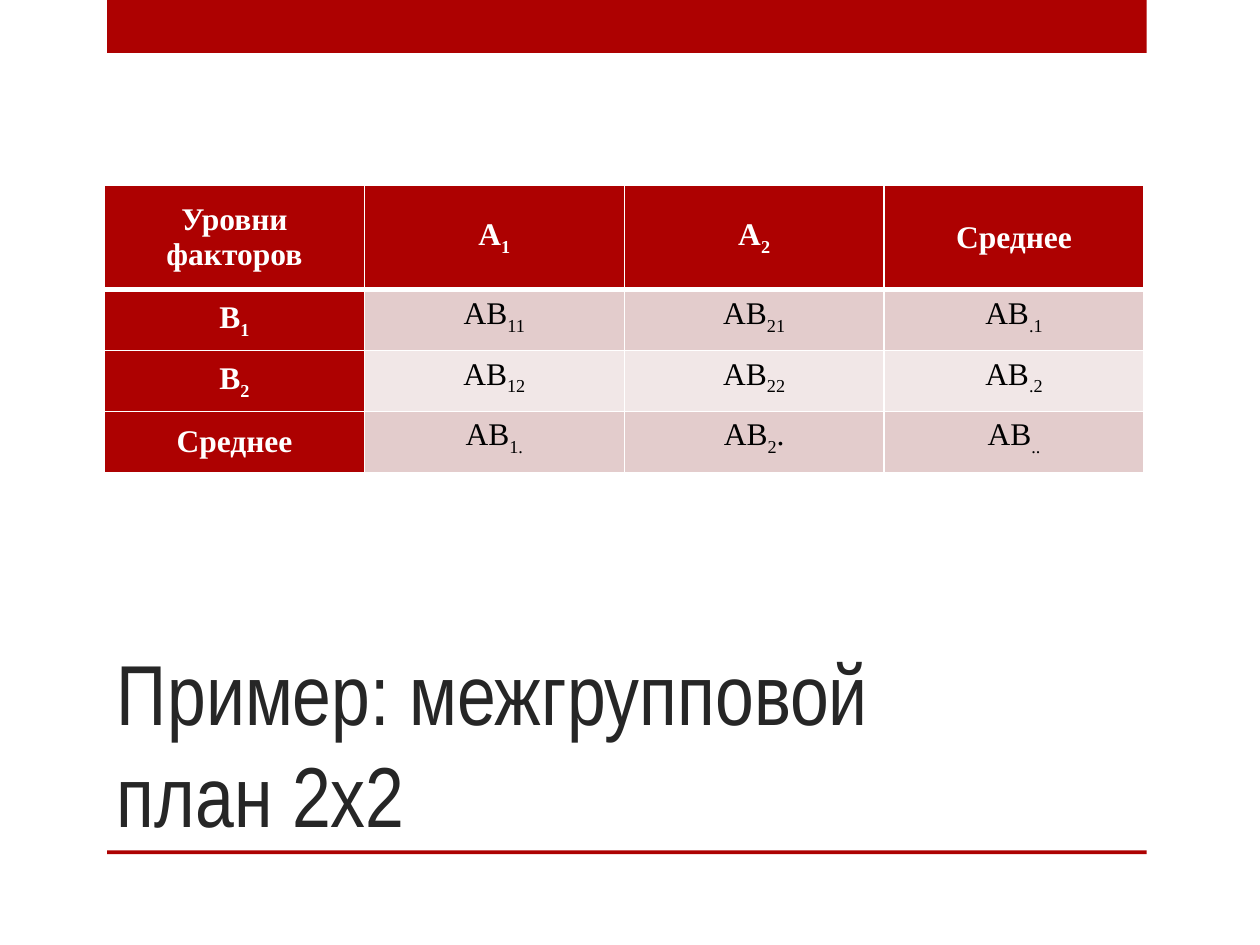
from lxml.etree import SubElement
from pptx import Presentation
from pptx.dml.color import RGBColor
from pptx.enum.shapes import MSO_SHAPE
from pptx.enum.text import MSO_ANCHOR, PP_ALIGN
from pptx.oxml.ns import qn
from pptx.util import Inches, Pt

RED = RGBColor(0xAD, 0x01, 0x01)
WHITE = RGBColor(0xFF, 0xFF, 0xFF)
BLACK = RGBColor(0, 0, 0)
DARK = RGBColor(0x26, 0x26, 0x26)
ROSE = RGBColor(0xE3, 0xCC, 0xCC)
PALE = RGBColor(0xF1, 0xE7, 0xE7)

ROWS = [
    [["Уровни факторов"], ["А", "1"], ["А", "2"], ["Среднее"]],
    [["B", "1"], ["AB", "11"], ["AB", "21"], ["AB", ".1"]],
    [["B", "2"], ["AB", "12"], ["AB", "22"], ["AB", ".2"]],
    [["Среднее"], ["AB", "1."], ["AB", "2", "."], ["AB", ".."]],
]


def add_bar(slide, left, top, width, height):
    bar = slide.shapes.add_shape(
        MSO_SHAPE.RECTANGLE, Inches(left), Inches(top), Inches(width), Inches(height))
    bar.shadow.inherit = False
    bar.fill.solid()
    bar.fill.fore_color.rgb = RED
    bar.line.fill.background()


def add_title(slide, left, top, width, height):
    box = slide.shapes.add_textbox(
        Inches(left), Inches(top), Inches(width), Inches(height))
    frame = box.text_frame
    frame.word_wrap = True
    frame.vertical_anchor = MSO_ANCHOR.BOTTOM
    frame.text = "Пример: межгрупповой план 2х2"
    font = frame.paragraphs[0].runs[0].font
    font.name = "Arial Narrow"
    font.size = Pt(48.6)
    font.color.rgb = DARK


def set_edge(cell, side, width):
    edge = SubElement(cell._tc.get_or_add_tcPr(), qn("a:" + side), w=str(Pt(width)))
    fill = SubElement(edge, qn("a:solidFill"))
    SubElement(fill, qn("a:srgbClr"), val=str(WHITE))


def fill_cell(cell, parts, row, col):
    head = row == 0 or col == 0
    for side in ("lnL", "lnR", "lnT", "lnB"):
        thick = (row, side) in ((0, "lnB"), (1, "lnT"))
        set_edge(cell, side, 3 if thick else 1)
    cell.fill.solid()
    cell.fill.fore_color.rgb = RED if head else ROSE if row % 2 else PALE
    cell.vertical_anchor = MSO_ANCHOR.MIDDLE if head else MSO_ANCHOR.TOP
    para = cell.text_frame.paragraphs[0]
    para.alignment = PP_ALIGN.CENTER
    for i, part in enumerate(parts):
        run = para.add_run()
        run.text = part
        font = run.font
        font.name = "Times New Roman"
        font.size = Pt(18)
        font.bold = head
        font.color.rgb = WHITE if head else BLACK
        if i == 1:
            run._r.get_or_add_rPr().set("baseline", "-25000")


def add_plan(slide, left, top, width, height):
    table = slide.shapes.add_table(
        len(ROWS), len(ROWS[0]), Inches(left), Inches(top),
        Inches(width), Inches(height)).table
    table.first_row = False
    table.horz_banding = False
    first = 0.83
    for r, cells in enumerate(ROWS):
        table.rows[r].height = Inches((height - first) / 3 if r else first)
        for c, parts in enumerate(cells):
            fill_cell(table.cell(r, c), parts, r, c)


def main():
    deck = Presentation()
    deck.slide_width = Inches(10)
    deck.slide_height = Inches(7.5)
    slide = deck.slides.add_slide(deck.slide_layouts[6])
    add_bar(slide, 0.85, 0, 8.25, 0.42)
    add_bar(slide, 0.85, 6.75, 8.25, 0.03)
    add_title(slide, 0.83, 5, 7.42, 1.75)
    add_plan(slide, 0.83, 1.47, 8.25, 2.28)
    deck.save("out.pptx")


if __name__ == "__main__":
    main()
